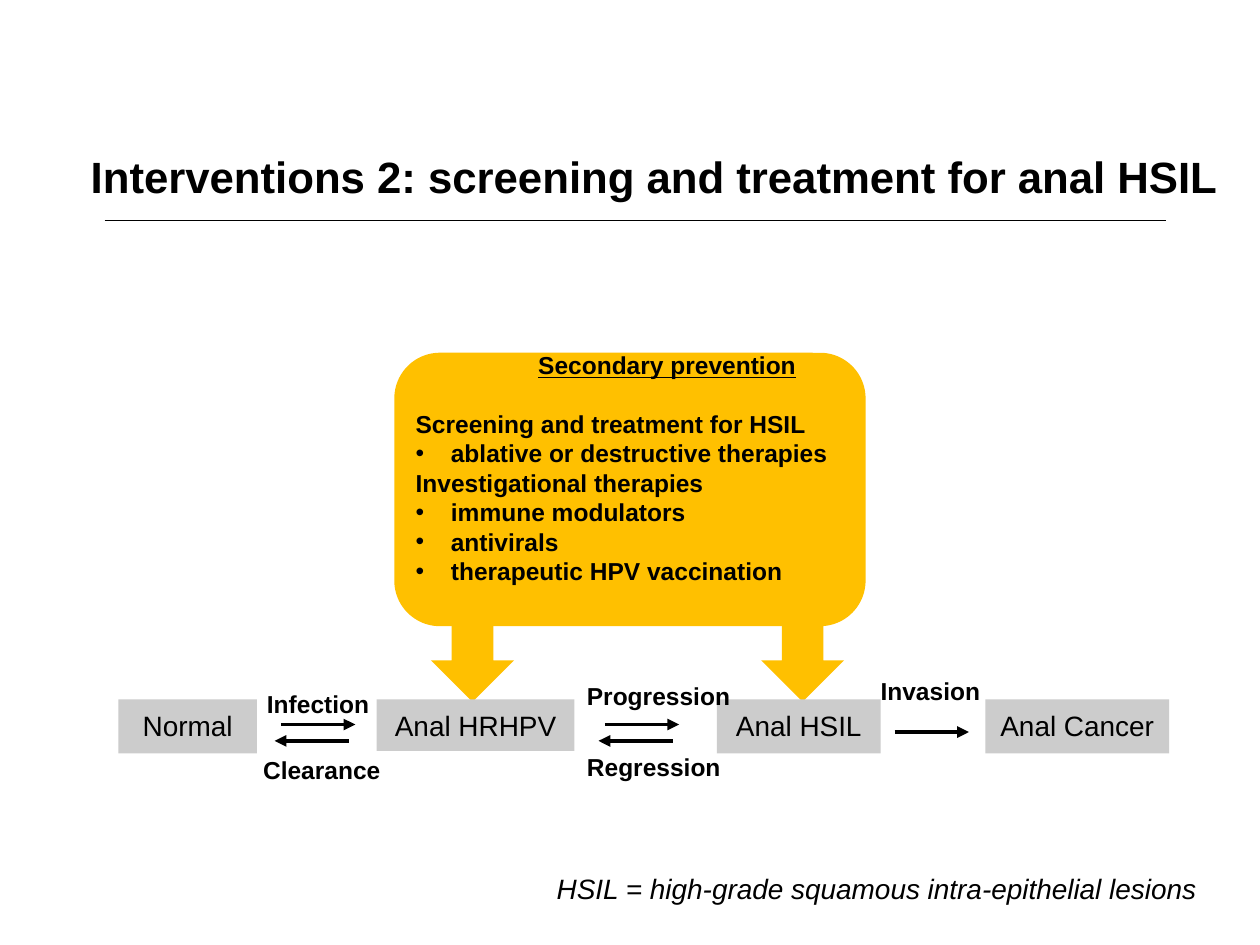
import collections
import lxml.etree
import pptx
import pptx.dml.color
import pptx.enum.shapes
import pptx.enum.text
import pptx.oxml.ns
import pptx.util

BLACK = pptx.dml.color.RGBColor(0x00, 0x00, 0x00)
AMBER = pptx.dml.color.RGBColor(0xFF, 0xC0, 0x00)
GREY = pptx.dml.color.RGBColor(0xCC, 0xCC, 0xCC)

SLIDE_WIDTH = pptx.util.Inches(10)
SLIDE_HEIGHT = pptx.util.Inches(7.5)
COLUMNS, ROWS = 100, 75

SHAPES = pptx.enum.shapes.MSO_SHAPE
ALIGN = pptx.enum.text.PP_ALIGN
Box = collections.namedtuple("Box", "left top width height")


def columns(count):
    return round(SLIDE_WIDTH * count / COLUMNS)


def rows(count):
    return round(SLIDE_HEIGHT * count / ROWS)


def inside(region, left, top, width, height):
    return Box(region.left + left, region.top + top, width, height)


def measure(box):
    return columns(box.left), rows(box.top), columns(box.width), rows(box.height)


def add_xml(parent, tag, **attributes):
    element = lxml.etree.SubElement(parent, pptx.oxml.ns.qn(tag))
    for name, value in attributes.items():
        element.set(name, value)
    return element


def format_font(paragraph, size, **style):
    settings = {"name": "Arial", "size": pptx.util.Pt(size), **style}
    for name, value in settings.items():
        setattr(paragraph.font, name, value)
    paragraph.font.color.rgb = BLACK


def add_block(slide, kind, box, color):
    shape = slide.shapes.add_shape(kind, *measure(box))
    shape.shadow.inherit = False
    shape.fill.solid()
    shape.fill.fore_color.rgb = color
    shape.line.fill.background()
    return shape


def add_label(slide, box, text, size, **style):
    shape = slide.shapes.add_textbox(*measure(box))
    shape.text_frame.word_wrap = False
    shape.text_frame.text = text
    format_font(shape.text_frame.paragraphs[0], size, **style)


def add_line(slide, region, start, end, level, weight, arrow=False):
    y = rows(region.top + level)
    connector = slide.shapes.add_connector(
        pptx.enum.shapes.MSO_CONNECTOR.STRAIGHT,
        columns(region.left + start), y, columns(region.left + end), y)
    connector.line.color.rgb = BLACK
    connector.line.width = pptx.util.Pt(weight)
    if arrow:
        add_xml(connector.line._get_or_add_ln(), "a:tailEnd", type="triangle")
    add_xml(connector._element.spPr, "a:effectLst")


def add_header(slide, region):
    title = slide.shapes.title
    title.left, title.top, title.width, title.height = measure(region)
    frame = title.text_frame
    frame.text = "Interventions 2: screening and treatment for anal HSIL"
    settings = {
        "vertical_anchor": pptx.enum.text.MSO_ANCHOR.TOP,
        "auto_size": pptx.enum.text.MSO_AUTO_SIZE.NONE,
        "margin_top": rows(0.8),
        "word_wrap": True,
    }
    for name, value in settings.items():
        setattr(frame, name, value)
    frame.paragraphs[0].alignment = ALIGN.LEFT
    format_font(frame.paragraphs[0], 25, bold=True)
    add_line(slide, region, 2.1, 86.3, 6.4, 0.75)


def add_prevention(slide, region):
    arrow_length, arrow_width = 20.8, 6.6
    for center in (6.2, 32.4):
        box = inside(region, center - arrow_length / 2, 14, arrow_length, arrow_width)
        add_block(slide, SHAPES.RIGHT_ARROW, box, AMBER).rotation = 90
    add_block(slide, SHAPES.ROUNDED_RECTANGLE, region, AMBER)

    textbox = slide.shapes.add_textbox(*measure(inside(region, 0.7, -0.7, 41.9, 19.9)))
    frame = textbox.text_frame
    frame.word_wrap = True
    heading = frame.paragraphs[0]
    heading.text = "Secondary prevention"
    heading.alignment = ALIGN.CENTER
    heading.line_spacing = heading.space_after = pptx.util.Pt(16.8)
    format_font(heading, 14, bold=True, underline=True)

    therapies = {
        "Screening and treatment for HSIL": ["ablative or destructive therapies"],
        "Investigational therapies": [
            "immune modulators", "antivirals", "therapeutic HPV vaccination"],
    }
    for approach, examples in therapies.items():
        for text in [approach, *examples]:
            paragraph = frame.add_paragraph()
            paragraph.text = text
            paragraph.line_spacing = pptx.util.Pt(16.8)
            if text in examples:
                properties = paragraph._p.get_or_add_pPr()
                properties.set("marL", str(columns(2.8)))
                properties.set("indent", str(-columns(2.8)))
                add_xml(properties, "a:buFont", typeface="Arial")
                add_xml(properties, "a:buChar", char="•")
            format_font(paragraph, 14, bold=True)


def add_pathway(slide, region):
    stages = [
        ("Normal", 0, 11, 4.3),
        ("Anal HRHPV", 20.5, 15.7, 4.1),
        ("Anal HSIL", 47.5, 13, 4.3),
        ("Anal Cancer", 68.8, 14.6, 4.3),
    ]
    for text, left, width, height in stages:
        box = inside(region, left, 2.3, width, height)
        shape = add_block(slide, SHAPES.RECTANGLE, box, GREY)
        frame = shape.text_frame
        frame.word_wrap = False
        frame.vertical_anchor = pptx.enum.text.MSO_ANCHOR.TOP
        frame.margin_top = rows(0.7)
        frame.text = text
        frame.paragraphs[0].alignment = ALIGN.CENTER
        format_font(frame.paragraphs[0], 16)

    arrow_length, back_shift = 5.9, 0.5
    for start, level, reversible in [(12.9, 4.3, True), (38.6, 4.3, True), (61.6, 4.9, False)]:
        end = start + arrow_length
        add_line(slide, region, start, end, level, 2.25, arrow=True)
        if reversible:
            add_line(slide, region, end - back_shift, start - back_shift,
                     level + 1.3, 2.25, arrow=True)

    transitions = [
        ("Infection", 10.8, 1, 10.2),
        ("Clearance", 10.5, 6.2, 11.4),
        ("Progression", 36.2, 0.4, 13.4),
        ("Regression", 36.2, 6, 12.7),
        ("Invasion", 59.5, 0, 9.9),
    ]
    for text, left, top, width in transitions:
        add_label(slide, inside(region, left, top, width, 3.4), text, 14, bold=True)


def add_footnote(slide, region):
    add_label(slide, region, "HSIL = high-grade squamous intra-epithelial lesions",
              16, italic=True)


def main():
    presentation = pptx.Presentation()
    presentation.slide_width = SLIDE_WIDTH
    presentation.slide_height = SLIDE_HEIGHT
    slide = presentation.slides.add_slide(presentation.slide_layouts[5])
    add_header(slide, Box(6.2, 11.1, 92.6, 6.7))
    add_prevention(slide, Box(31.3, 28, 37.4, 21.7))
    add_pathway(slide, Box(9.4, 53.2, 83.4, 9.6))
    add_footnote(slide, Box(43.2, 68.7, 53.4, 3.7))
    presentation.save("out.pptx")


if __name__ == "__main__":
    main()
